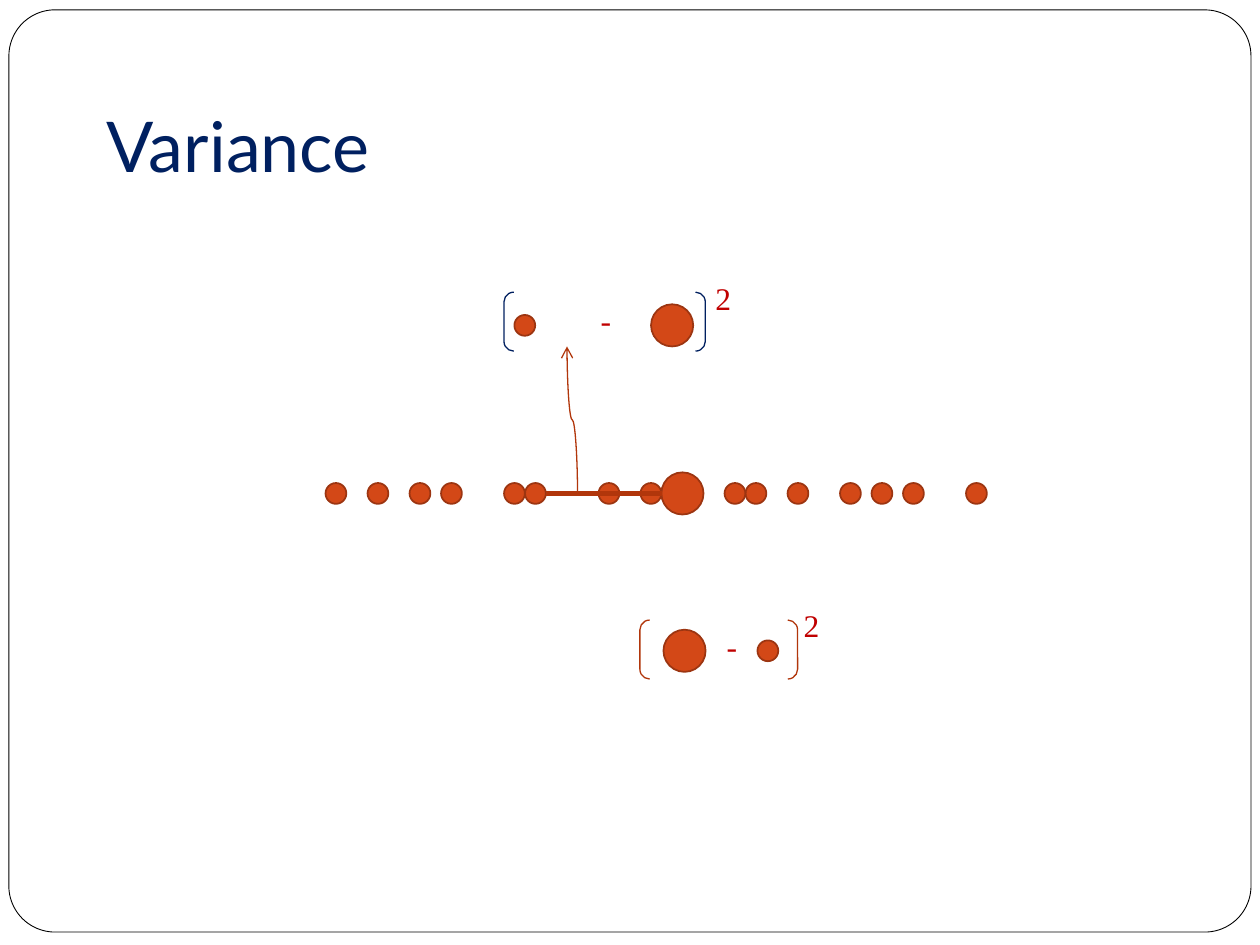
"""Build a slide that explains variance with points on a line and squared differences."""
from dataclasses import dataclass

from lxml import etree
from pptx import Presentation
from pptx import util as u
from pptx.dml.color import RGBColor
from pptx.enum import shapes, text
from pptx.oxml.ns import qn

COLORS = {
    "paper": "FFFFFF", "frame": "000000", "title": "002060", "point": "D34817",
    "rim": "9C3511", "link": "B1360B", "symbol": "C00000",
}
GRID = 2.54 / 12
AXIS = 47 * GRID
POINT, MEAN = 0.42, 0.85
POINT_STEPS = (32, 36, 40, 43, 49, 51, 58, 62, 87, 84, 81, 76, 72, 70, 93)
MEAN_STEP = 65


@dataclass(frozen=True)
class SquaredDifference:
    """Centimetre positions of one bracketed, squared difference."""
    left: float
    top: float
    width: float
    color: str
    point_x: float
    mean_x: float
    center_y: float
    minus: tuple[float, float]
    power: tuple[float, float]


DIFFERENCES = (
    SquaredDifference(12.9, 12.5, 3.18, "link", 15.48, 13.8, 13.12, (14.4, 12.52), (15.95, 12.09)),
    SquaredDifference(10.16, 5.89, 4.06, "title", 10.58, 13.55, 6.56, (11.86, 5.94), (14.17, 5.51)),
)


def rgb(name: str) -> RGBColor:
    """Look up a named colour."""
    return RGBColor.from_string(COLORS[name])


def write(frame, words: str, *, size: float, font: str, color: str) -> None:
    """Put formatted text in a text frame."""
    paragraph = frame.paragraphs[0]
    paragraph.alignment = text.PP_ALIGN.LEFT
    run = paragraph.add_run()
    run.text = words
    run.font.size, run.font.name = u.Pt(size), font
    run.font.color.rgb = rgb(color)


def add_outline(slide, kind, box: tuple, line: str, weight: float, fill: str = ""):
    """Add a preset shape with a line and an optional fill."""
    shape = slide.shapes.add_shape(kind, *map(u.Cm, box))
    shape.shadow.inherit = False
    shape.line.color.rgb, shape.line.width = rgb(line), u.Pt(weight)
    if fill:
        shape.fill.solid()
        shape.fill.fore_color.rgb = rgb(fill)
    else:
        shape.fill.background()
    return shape


def add_dot(slide, x: float, y: float, size: float) -> None:
    """Add a circle around its centre."""
    box = (x - size / 2, y - size / 2, size, size)
    add_outline(slide, shapes.MSO_SHAPE.OVAL, box, "rim", 1, "point")


def add_link(slide, kind, start: tuple, end: tuple, weight: float):
    """Add a connector without a shadow."""
    link = slide.shapes.add_connector(kind, *map(u.Cm, start + end))
    link.line.color.rgb, link.line.width = rgb("link"), u.Pt(weight)
    etree.SubElement(link._element.spPr, qn("a:effectLst"))
    return link


def add_rising_arrow(slide, start: tuple, end: tuple) -> None:
    """Add a curved arrow that leaves and arrives vertically."""
    rise, shift = start[1] - end[1], start[0] - end[0]
    x, y = (start[0] + end[0]) / 2, (start[1] + end[1]) / 2
    arrow = add_link(slide, shapes.MSO_CONNECTOR.CURVE,
                     (x - rise / 2, y + shift / 2), (x + rise / 2, y - shift / 2), 0.75)
    properties = arrow._element.spPr
    properties.find(qn("a:xfrm")).set("rot", str(270 * 60000))
    etree.SubElement(properties.find(qn("a:ln")), qn("a:tailEnd"), type="arrow")


def add_symbol(slide, words: str, corner: tuple, width: float) -> None:
    """Add one sign of a formula."""
    frame = slide.shapes.add_textbox(*map(u.Cm, (*corner, width, 1.02))).text_frame
    frame.word_wrap = False
    frame.auto_size = text.MSO_AUTO_SIZE.SHAPE_TO_FIT_TEXT
    write(frame, words, size=18, font="Times New Roman", color="symbol")


def add_difference(slide, item: SquaredDifference) -> None:
    """Add a squared difference between a point and the mean."""
    add_dot(slide, item.point_x, item.center_y, POINT)
    add_dot(slide, item.mean_x, item.center_y, MEAN)
    box = (item.left, item.top, item.width, 1.19)
    add_outline(slide, shapes.MSO_SHAPE.DOUBLE_BRACKET, box, item.color, 0.75)
    add_symbol(slide, "-", item.minus, 0.74)
    add_symbol(slide, "2", item.power, 0.86)


def add_title(slide) -> None:
    """Place and format the title."""
    title = slide.shapes.title
    title.left, title.top, title.width, title.height = map(u.Cm, (1.9, 0.84, 21.6, 3.17))
    title.text_frame.vertical_anchor = text.MSO_ANCHOR.BOTTOM
    title.text_frame.margin_bottom = u.Cm(0.25)
    write(title.text_frame, "Variance", size=40, font="Lato", color="title")


def main() -> None:
    """Build and save the slide."""
    deck = Presentation()
    deck.slide_width, deck.slide_height = u.Cm(25.4), u.Cm(19.05)
    slide = deck.slides.add_slide(deck.slide_layouts[5])
    border = add_outline(slide, shapes.MSO_SHAPE.ROUNDED_RECTANGLE,
                         (0.18, 0.2, 25.04, 18.59), "frame", 0.5, "paper")
    border.adjustments[0] = 0.05
    slide.shapes.title._element.addprevious(border._element)
    add_title(slide)
    for step in POINT_STEPS:
        add_dot(slide, step * GRID, AXIS, POINT)
    add_dot(slide, MEAN_STEP * GRID, AXIS, MEAN)
    add_link(slide, shapes.MSO_CONNECTOR.STRAIGHT, (52 * GRID, AXIS), (63 * GRID, AXIS), 2.75)
    add_rising_arrow(slide, (55 * GRID, AXIS), (54 * GRID, 33 * GRID))
    for item in DIFFERENCES:
        add_difference(slide, item)
    deck.save("out.pptx")


if __name__ == "__main__":
    main()
